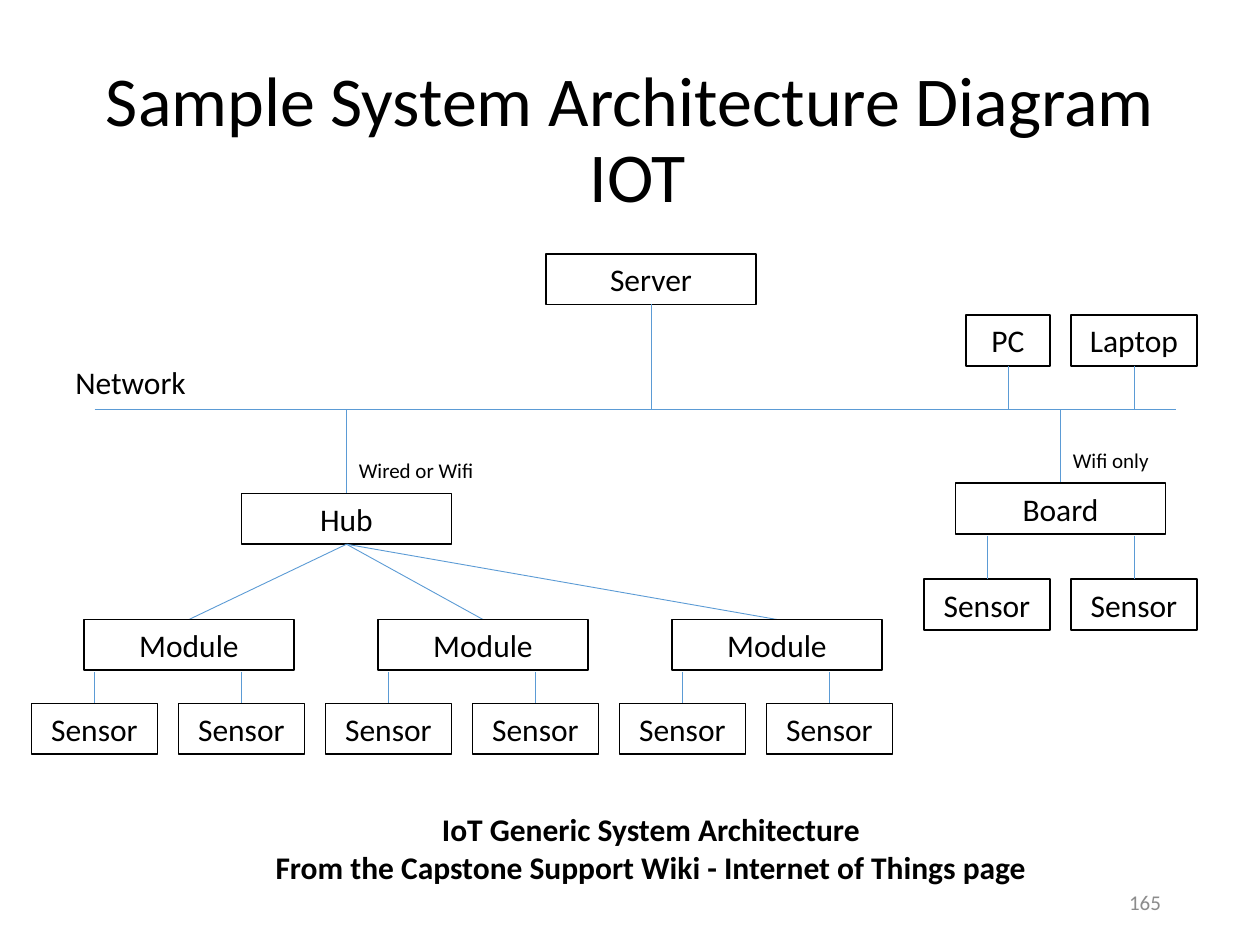
from lxml import etree
from pptx import Presentation
from pptx.dml.color import RGBColor
from pptx.enum import shapes, text
from pptx.oxml.ns import qn
from pptx.util import Pt

FONT = "Calibri"
BLACK, WHITE, BLUE, GREY = "000000", "FFFFFF", "5B9BD5", "8C8C8C"
HIGH, WIDE, SMALL, STEP = 29, 120, 72, 84
LEFT, MID, RIGHT = text.PP_ALIGN.LEFT, text.PP_ALIGN.CENTER, text.PP_ALIGN.RIGHT


def paint(color, code):
    """Set a fill, line or font colour from a hex string."""
    color.rgb = RGBColor.from_string(code)


def write(frame, lines, size=18, align=MID, code=BLACK, bold=False):
    """Write each line as a paragraph, with line breaks between its runs."""
    for i, line in enumerate(lines):
        para = frame.add_paragraph() if i else frame.paragraphs[0]
        para.alignment = align
        for j, part in enumerate(line.split("\n")):
            if j:
                para.add_line_break()
            run = para.add_run()
            run.text = part
            font = run.font
            font.name, font.size, font.bold = FONT, Pt(size), bold
            paint(font.color, code)


def label(slide, box, lines, wrap=False, **style):
    """Add a text box and return its frame."""
    frame = slide.shapes.add_textbox(*map(Pt, box)).text_frame
    frame.word_wrap = wrap
    write(frame, lines, **style)
    return frame


def node(slide, x, y, name, wide=WIDE):
    """Add an outlined box with a centred name."""
    box = slide.shapes.add_shape(
        shapes.MSO_SHAPE.RECTANGLE, Pt(x), Pt(y), Pt(wide), Pt(HIGH))
    box.shadow.inherit = False
    box.fill.solid()
    paint(box.fill.fore_color, WHITE)
    paint(box.line.color, BLACK)
    box.line.width = Pt(1)
    box.text_frame.word_wrap = True
    write(box.text_frame, [name])


def link(slide, x1, y1, x2, y2):
    """Draw a thin straight link."""
    line = slide.shapes.add_connector(
        shapes.MSO_CONNECTOR.STRAIGHT, Pt(x1), Pt(y1), Pt(x2), Pt(y2))
    paint(line.line.color, BLUE)
    line.line.width = Pt(0.5)
    etree.SubElement(line._element.spPr, qn("a:effectLst"))


def cluster(slide, x, y, name, inset, drop):
    """Place a board above its two sensors."""
    node(slide, x + inset, y, name)
    for left in (x, x + STEP):
        mid = left + SMALL / 2
        node(slide, left, y + drop, "Sensor", SMALL)
        link(slide, mid, y + HIGH + 1, mid, y + drop)


def title(slide, x, y, wide, high):
    """Place the two-line heading."""
    frame = label(slide, (x, y, wide, high),
                  ["Sample System Architecture Diagram\n IOT"], True, size=40)
    frame.vertical_anchor = text.MSO_ANCHOR.MIDDLE
    frame.paragraphs[0].line_spacing = 0.9


def network(slide, x, y, wide):
    """Place the network line with the server and computers above it."""
    link(slide, x, y, x + wide, y)
    label(slide, (x - 18, y - 30, 78, HIGH), ["Network"], align=LEFT)
    for left, top, size, name in ((258, 89, WIDE, "Server"),
                                  (498, 54, 48, "PC"),
                                  (558, 54, SMALL, "Laptop")):
        mid = x + left + size / 2
        node(slide, x + left, y - top, name, size)
        link(slide, mid, y - top + HIGH, mid, y)


def wired(slide, x, y):
    """Place the hub branch with its three modules."""
    mid = x + 180
    link(slide, mid, y, mid, y + 48)
    label(slide, (mid, y + 24, 81, 22), ["Wired or Wifi"], size=12, align=LEFT)
    node(slide, mid - WIDE / 2, y + 48, "Hub")
    for i in range(3):
        left = x + 2 * STEP * i
        link(slide, mid, y + 48 + HIGH, left + 30 + WIDE / 2, y + 120)
        cluster(slide, left, y + 120, "Module", 30, 48)


def wifi(slide, x, y):
    """Place the wireless branch with its board."""
    mid = x + 78
    link(slide, mid, y, mid, y + 42)
    label(slide, (mid, y + 18, 58, 22), ["Wifi only"], size=12, align=LEFT)
    cluster(slide, x, y + 42, "Board", 18, 55)


def footer(slide, x, y, wide):
    """Place the caption and the page number."""
    label(slide, (x, y, wide, 51),
          ["IoT Generic System Architecture",
           "From the Capstone Support Wiki - Internet of Things page"],
          bold=True)
    page = label(slide, (x + 360, y + 41.5, 162, HIGH), ["165"], True,
                 size=12, align=RIGHT, code=GREY)
    page.vertical_anchor = text.MSO_ANCHOR.MIDDLE


def main():
    """Build and save the slide."""
    deck = Presentation()
    deck.slide_width, deck.slide_height = Pt(720), Pt(540)
    slide = deck.slides.add_slide(deck.slide_layouts[6])
    title(slide, 49.5, 29, 621, 104)
    network(slide, 54, 234, 618)
    wired(slide, 18, 234)
    wifi(slide, 528, 234)
    footer(slide, 148.5, 459.5, 447)
    deck.save("out.pptx")


if __name__ == "__main__":
    main()
